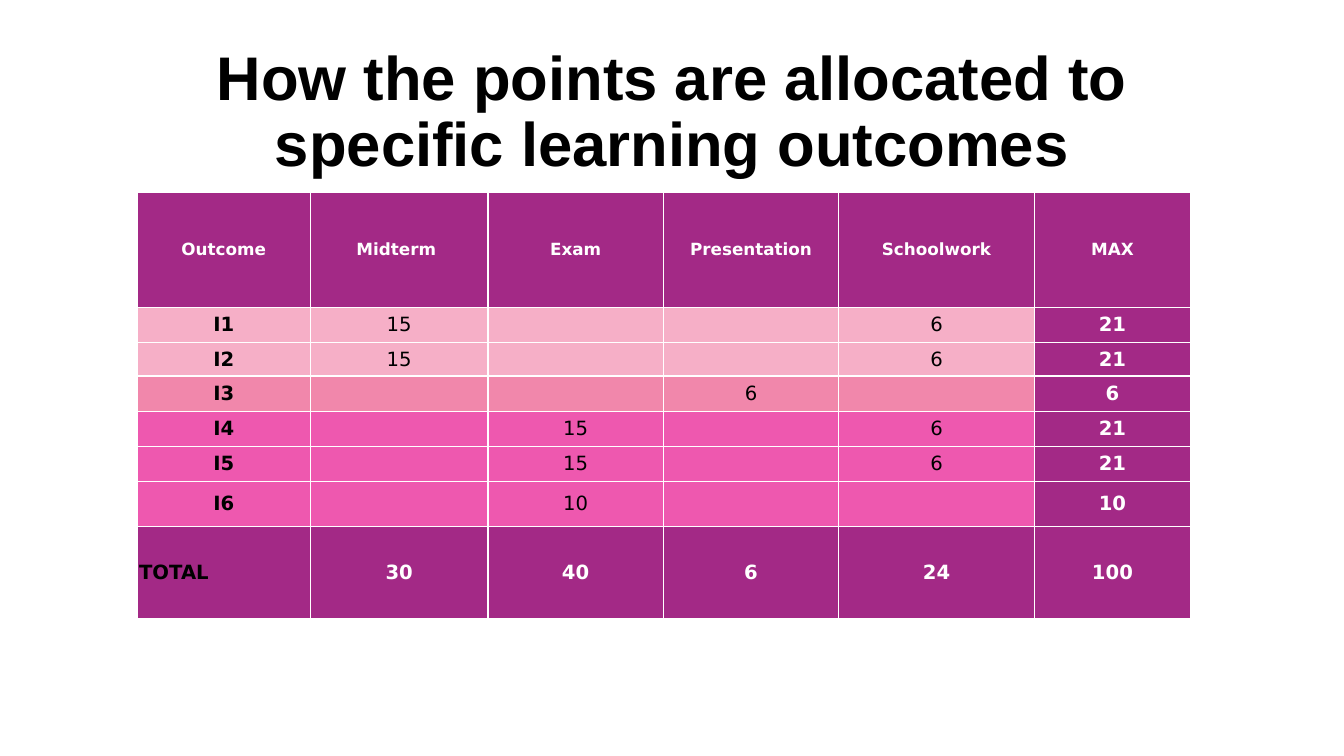
from pptx import Presentation
from pptx.dml.color import RGBColor
from pptx.enum import text
from pptx.util import Inches, Pt

PLUM, ROSE, CORAL, PINK = "A32986", "F6AFC7", "F187AB", "EE58AF"
BLACK, WHITE = "000000", "FFFFFF"

HEAD = ["Outcome", "Midterm ", "Exam", "Presentation", "Schoolwork", "MAX"]
SCORES = [
    (ROSE, ["I1", "15", "", "", "6", "21"]),
    (ROSE, ["I2", "15", "", "", "6", "21"]),
    (CORAL, ["I3", "", "", "6", "", "6"]),
    (PINK, ["I4", "", "15", "", "6", "21"]),
    (PINK, ["I5", "", "15", "", "6", "21"]),
    (PINK, ["I6", "", "10", "", "", "10"]),
]
TOTAL = ["TOTAL", "30", "40", "6", "24", "100"]
WIDTHS = [1.72, 1.76, 1.74, 1.74, 1.94, 1.55]
HEIGHTS = [1.14, 0.35, 0.33, 0.35, 0.35, 0.35, 0.44, 0.92]


def tint(code):
    return RGBColor.from_string(code)


class Deck:
    """Holds the fonts and the current slide."""
    title_font = "Arial"
    table_font = "DejaVu Sans"

    def __init__(self):
        self.prs = Presentation()
        self.prs.slide_width, self.prs.slide_height = Inches(13.33), Inches(7.5)
        self.slide = self.prs.slides.add_slide(self.prs.slide_layouts[6])

    def style(self, para, face, size, color, bold, align=text.PP_ALIGN.CENTER):
        para.alignment = align
        font = para.font
        font.name, font.size, font.bold = face, Pt(size), bold
        font.color.rgb = tint(color)

    def title(self, words, left, top, width, height):
        box = self.slide.shapes.add_textbox(*map(Inches, (left, top, width, height)))
        frame = box.text_frame
        frame.word_wrap = True
        frame.vertical_anchor = text.MSO_ANCHOR.MIDDLE
        para = frame.paragraphs[0]
        para.text = words
        para.line_spacing = 0.9
        self.style(para, self.title_font, 44, BLACK, True)

    def table(self, left, top, widths, heights):
        frame = self.slide.shapes.add_table(
            len(heights), len(widths), Inches(left), Inches(top),
            Inches(sum(widths)), Inches(sum(heights)))
        grid = frame.table
        for col, width in zip(grid.columns, widths):
            col.width = Inches(width)
        for row, height in zip(grid.rows, heights):
            row.height = Inches(height)
        return grid

    def cell(self, cell, words, fill, size, color, bold, align=text.PP_ALIGN.CENTER):
        cell.fill.solid()
        cell.fill.fore_color.rgb = tint(fill)
        cell.margin_left = cell.margin_right = Inches(0.02)
        cell.margin_top = cell.margin_bottom = Inches(0.02)
        cell.vertical_anchor = text.MSO_ANCHOR.MIDDLE
        para = cell.text_frame.paragraphs[0]
        if words:
            para.text = words
        self.style(para, self.table_font, size, color, bold, align)


def main():
    deck = Deck()
    deck.title("How the points are allocated to specific learning outcomes",
               0.92, 0.4, 11.5, 1.45)
    grid = deck.table(1.36, 1.91, WIDTHS, HEIGHTS)
    last = len(HEAD) - 1

    for col, words in enumerate(HEAD):
        deck.cell(grid.cell(0, col), words, PLUM, 12, WHITE, True)

    for row, (fill, marks) in enumerate(SCORES, 1):
        for col, words in enumerate(marks):
            is_max = col == last
            deck.cell(grid.cell(row, col), words, PLUM if is_max else fill, 14,
                      WHITE if is_max else BLACK, col in (0, last))

    foot = len(HEIGHTS) - 1
    deck.cell(grid.cell(foot, 0), TOTAL[0], PLUM, 14, BLACK, True, text.PP_ALIGN.LEFT)
    for col, words in enumerate(TOTAL[1:], 1):
        deck.cell(grid.cell(foot, col), words, PLUM, 14, WHITE, True)

    deck.prs.save("out.pptx")


if __name__ == "__main__":
    main()
